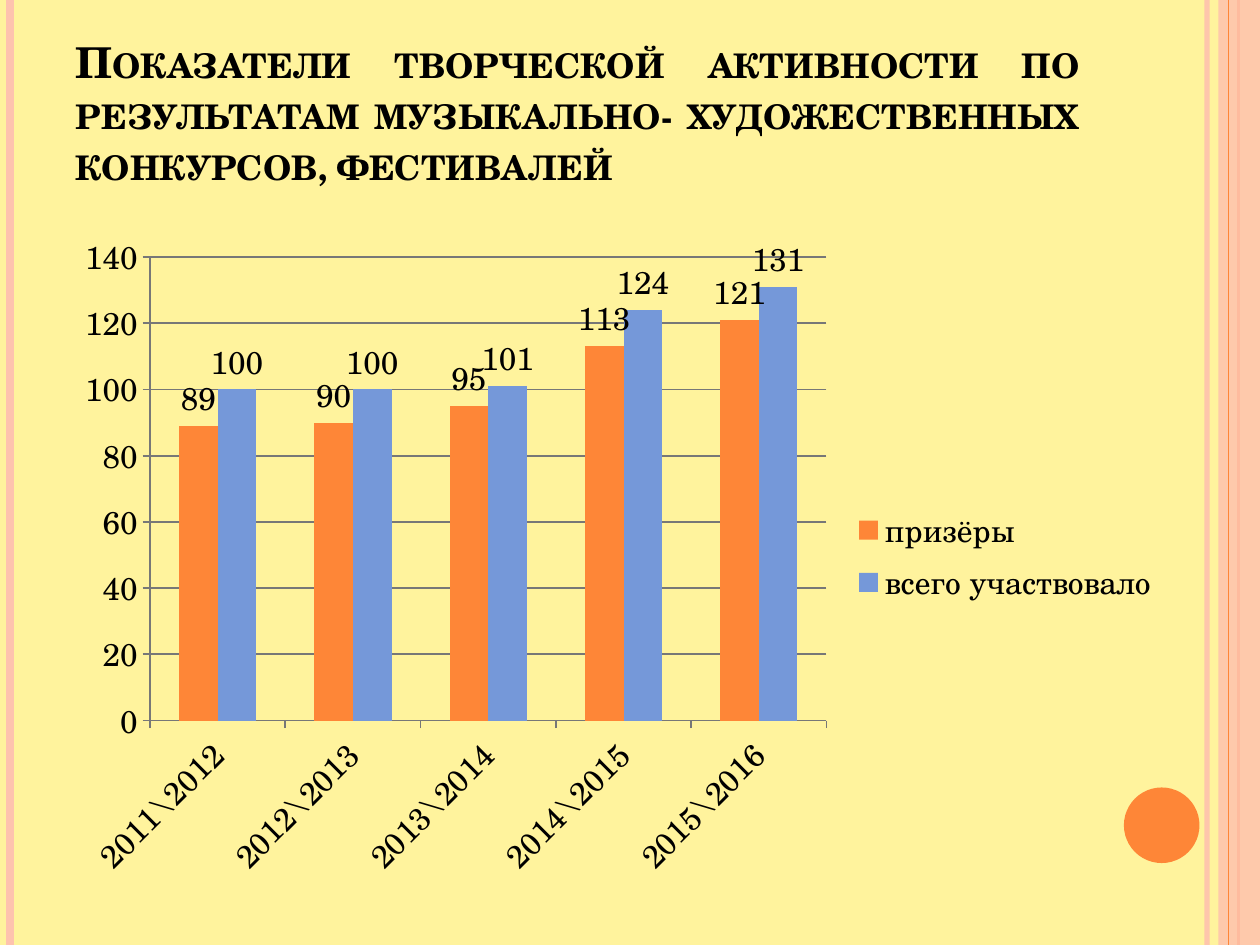
from lxml import etree
from pptx import Presentation
from pptx.chart.data import CategoryChartData
from pptx.dml.color import RGBColor
from pptx.enum.chart import XL_CHART_TYPE, XL_LABEL_POSITION, XL_LEGEND_POSITION, XL_TICK_MARK
from pptx.enum.shapes import MSO_CONNECTOR, MSO_SHAPE
from pptx.enum.text import MSO_ANCHOR, MSO_AUTO_SIZE, PP_ALIGN
from pptx.oxml import parse_xml
from pptx.oxml.ns import nsdecls, qn
from pptx.util import Inches, Pt

FONT = "TeX Gyre Schola"
ORANGE, PEACH, BLUE = "FE8637", "FEC3AE", "7598D9"
CREAM, BLACK, GREY = "FFF39D", "000000", "777777"

TITLE = ("Показатели творческой активности по результатам "
         "музыкально- художественных конкурсов, фестивалей")
YEARS = [f"{year}\\{year + 1}" for year in range(2011, 2016)]
SERIES = [("призёры", (89, 90, 95, 113, 121), ORANGE),
          ("всего участвовало", (100, 100, 101, 124, 131), BLUE)]


def rgb(value):
    """Turn a hex string into a colour."""
    return RGBColor.from_string(value)


def paint(fill, color, alpha=100):
    """Make a fill solid, with an opacity in percent."""
    fill.solid()
    fill.fore_color.rgb = rgb(color)
    if alpha < 100:
        set_alpha(fill.fore_color, alpha)


def set_alpha(color, alpha):
    """Set the opacity of a colour in percent."""
    node = color._xFill.find(qn("a:srgbClr"))
    etree.SubElement(node, qn("a:alpha"), val=str(alpha * 1000))


def add_rule(slide, x, top, height, color, width, alpha=100):
    """Draw a vertical line."""
    s = slide.shapes.add_connector(MSO_CONNECTOR.STRAIGHT, x, top, x, top + height)
    s.line.width = Pt(width)
    paint(s.line.fill, color, alpha)
    etree.SubElement(s._element.spPr, qn("a:effectLst"))


def add_block(slide, kind, left, top, width, height, color, alpha=100):
    """Draw a filled shape without an outline."""
    s = slide.shapes.add_shape(kind, left, top, width, height)
    s.shadow.inherit = False
    s.line.fill.background()
    paint(s.fill, color, alpha)


def add_frame(slide, left, top, width, height):
    """Draw the side stripes and the disc."""
    right = left + width
    add_rule(slide, right - Inches(0.42), top, height, PEACH, 3, 93)
    add_rule(slide, left + Inches(0.08), top, height, PEACH, 4.5)
    add_rule(slide, right - Inches(0.17), top, height, ORANGE, 1.5)
    add_block(slide, MSO_SHAPE.RECTANGLE, right - Inches(0.33), top,
              Inches(0.33), height, PEACH, 87)
    add_rule(slide, right - Inches(0.25), top, height, ORANGE, 0.75)
    add_block(slide, MSO_SHAPE.OVAL, right - Inches(1.08), top + Inches(6.25),
              Inches(0.6), Inches(0.6), ORANGE)


def add_title(slide, left, top, width, height):
    """Place the title in justified small capitals."""
    s = slide.shapes.title
    s.left, s.top, s.width, s.height = left, top, width, height
    tf = s.text_frame
    tf.text = TITLE
    tf.word_wrap = True
    tf.auto_size = MSO_AUTO_SIZE.NONE
    tf.vertical_anchor = MSO_ANCHOR.BOTTOM
    p = tf.paragraphs[0]
    p.alignment = PP_ALIGN.JUSTIFY
    p.font.name, p.font.size, p.font.bold = FONT, Pt(24.3), True
    p.font.color.rgb = rgb(BLACK)
    p.font._element.set("cap", "small")


def style_axis(axis):
    """Give an axis grey lines and outer ticks."""
    axis.major_tick_mark = XL_TICK_MARK.OUTSIDE
    axis.minor_tick_mark = XL_TICK_MARK.NONE
    axis.format.line.color.rgb = rgb(GREY)
    axis.format.line.width = Pt(1)


def set_plot_area(chart, **box):
    """Fix the inner plot area as fractions of the chart."""
    plot_area = chart._chartSpace.chart.plotArea
    for old in plot_area.findall(qn("c:layout")):
        plot_area.remove(old)
    values = "".join(f'<c:{name} val="{value}"/>' for name, value in box.items())
    plot_area.insert(0, parse_xml(
        f'<c:layout {nsdecls("c")}><c:manualLayout><c:layoutTarget val="inner"/>'
        f'<c:xMode val="edge"/><c:yMode val="edge"/>{values}'
        '</c:manualLayout></c:layout>'))


def add_results_chart(slide, left, top, width, height):
    """Place the column chart of participants and winners."""
    data = CategoryChartData()
    data.categories = YEARS
    for name, values, _ in SERIES:
        data.add_series(name, values)
    chart = slide.shapes.add_chart(XL_CHART_TYPE.COLUMN_CLUSTERED,
                                   left, top, width, height, data).chart
    chart.has_title = False
    chart.font.name, chart.font.size = FONT, Pt(18)
    chart.font.color.rgb = rgb(BLACK)
    chart.has_legend = True
    chart.legend.position = XL_LEGEND_POSITION.RIGHT
    chart.legend.include_in_layout = False
    set_plot_area(chart, x=Inches(0.69) / width, y=Inches(0.29) / height,
                  w=Inches(5.37) / width, h=Inches(3.68) / height)

    plot = chart.plots[0]
    plot.vary_by_categories = False
    plot.gap_width, plot.overlap = 150, 0
    for series, (_, _, color) in zip(plot.series, SERIES):
        paint(series.format.fill, color)
        series.data_labels.show_value = True
        series.data_labels.position = XL_LABEL_POSITION.OUTSIDE_END

    for axis in (chart.category_axis, chart.value_axis):
        style_axis(axis)
    chart.category_axis.tick_labels.font.size = Pt(18)
    body = chart.category_axis._element.find(qn("c:txPr")).find(qn("a:bodyPr"))
    body.set("rot", "-2700000")
    value_axis = chart.value_axis
    value_axis.minimum_scale, value_axis.maximum_scale = 0, 140
    value_axis.major_unit = 20
    value_axis.major_gridlines.format.line.color.rgb = rgb(GREY)
    value_axis.major_gridlines.format.line.width = Pt(1)


def main():
    """Build and save the slide."""
    prs = Presentation()
    prs.slide_width, prs.slide_height = Inches(10), Inches(7.5)
    slide = prs.slides.add_slide(prs.slide_layouts[5])
    paint(slide.background.fill, CREAM)
    add_frame(slide, 0, 0, prs.slide_width, prs.slide_height)
    add_title(slide, Inches(0.5), Inches(0.36), Inches(8.17), Inches(1.19))
    add_results_chart(slide, Inches(0.5), Inches(1.75), Inches(8.8), Inches(5.33))
    prs.save("out.pptx")


if __name__ == "__main__":
    main()
